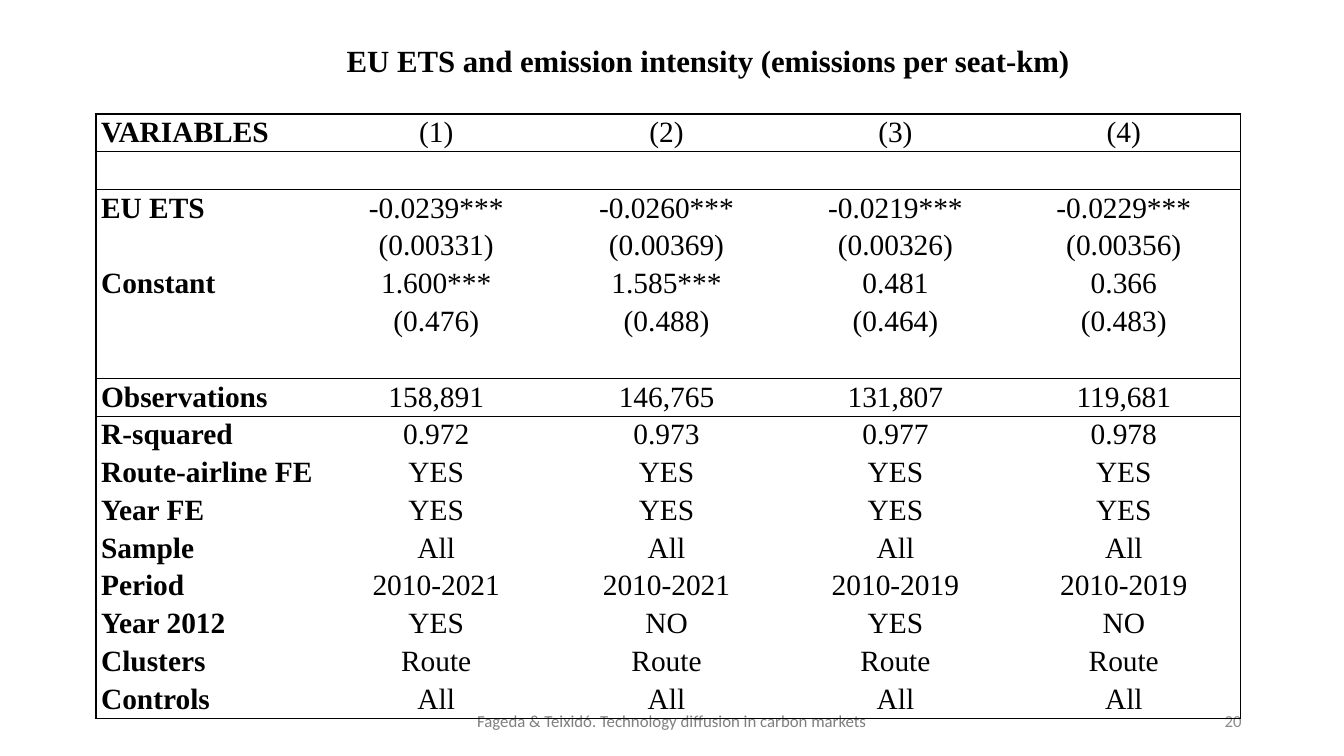
from lxml import etree
from pptx import Presentation
from pptx.dml.color import RGBColor
from pptx.enum.text import MSO_ANCHOR, MSO_AUTO_SIZE, PP_ALIGN
from pptx.oxml.ns import qn
from pptx.util import Pt

LEFT, CENTER, RIGHT = PP_ALIGN.LEFT, PP_ALIGN.CENTER, PP_ALIGN.RIGHT
TOP, MIDDLE = MSO_ANCHOR.TOP, MSO_ANCHOR.MIDDLE
NO_FIT = MSO_AUTO_SIZE.NONE
COLORS = {"ink": "000000", "foot": "808080", "page": "8C8C8C"}
SERIF, SANS = "Times New Roman", "Calibri"
PLAIN = "{2D5ABB26-0587-4C30-8999-92F81FD0307C}"

WIDTHS = [162, 162, 167, 160, 166.3]
ROW_H = 27
BLANK = [""] * 5
HEAD = [["VARIABLES", "(1)", "(2)", "(3)", "(4)"]]
EFFECTS = [
    BLANK,
    ["EU ETS", "-0.0239***", "-0.0260***", "-0.0219***", "-0.0229***"],
    ["", "(0.00331)", "(0.00369)", "(0.00326)", "(0.00356)"],
    ["Constant", "1.600***", "1.585***", "0.481", "0.366"],
    ["", "(0.476)", "(0.488)", "(0.464)", "(0.483)"],
    BLANK,
]
DETAILS = [
    ["Observations", "158,891", "146,765", "131,807", "119,681"],
    ["R-squared", "0.972", "0.973", "0.977", "0.978"],
    ["Route-airline FE"] + ["YES"] * 4,
    ["Year FE"] + ["YES"] * 4,
    ["Sample"] + ["All"] * 4,
    ["Period"] + ["2010-2021"] * 2 + ["2010-2019"] * 2,
    ["Year 2012"] + ["YES", "NO"] * 2,
    ["Clusters"] + ["Route"] * 4,
    ["Controls"] + ["All"] * 4,
]


class Page:
    def __init__(self, deck):
        self.slide = deck.slides.add_slide(deck.slide_layouts[5])

    def label(self, frame, text, size, font, color, align, bold=False):
        frame.text = text
        para = frame.paragraphs[0]
        para.alignment = align
        para.font.size = Pt(size)
        para.font.name = font
        para.font.bold = bold
        para.font.color.rgb = RGBColor.from_string(COLORS[color])
        return para

    def title(self, text, x, y, w, h):
        shape = self.slide.shapes.title
        shape.left, shape.top, shape.width, shape.height = map(Pt, (x, y, w, h))
        frame = shape.text_frame
        frame.vertical_anchor, frame.auto_size = TOP, NO_FIT
        para = self.label(frame, text, 22, SERIF, "ink", CENTER, True)
        para.line_spacing, para.space_after = 1.07, Pt(8)

    def note(self, text, x, y, w, h, color, align):
        frame = self.slide.shapes.add_textbox(*map(Pt, (x, y, w, h))).text_frame
        frame.word_wrap, frame.vertical_anchor = True, MIDDLE
        self.label(frame, text, 12, SANS, color, align)

    def border(self, cell, sides):
        """Draw 1 pt lines on the given sides, a subset of "LRTB" in that order."""
        props = cell._tc.get_or_add_tcPr()
        for i, side in enumerate(sides):
            line = etree.Element(qn(f"a:ln{side}"), w=str(Pt(1)))
            fill = etree.SubElement(line, qn("a:solidFill"))
            etree.SubElement(fill, qn("a:srgbClr"), val=COLORS["ink"])
            props.insert(i, line)

    def table(self, blocks, x, y):
        """Stack blocks of rows, ruled off from each other, inside one frame."""
        rows = sum(blocks, [])
        tops, ends, count = set(), set(), 0
        for block in blocks:
            tops.add(count)
            count += len(block)
            ends.add(count - 1)
        size = (x, y, sum(WIDTHS), ROW_H * count)
        grid = self.slide.shapes.add_table(count, len(WIDTHS), *map(Pt, size)).table
        grid.first_row = grid.horz_banding = False
        grid._tbl.tblPr.find(qn("a:tableStyleId")).text = PLAIN
        for col, width in zip(grid.columns, WIDTHS):
            col.width = Pt(width)
        for r, row in enumerate(rows):
            grid.rows[r].height = Pt(ROW_H)
            for c, text in enumerate(row):
                cell = grid.cell(r, c)
                cell.margin_left = cell.margin_right = Pt(3.6)
                cell.margin_top = cell.margin_bottom = 0
                cell.fill.background()
                para = self.label(cell.text_frame, text, 21, SERIF, "ink",
                                  CENTER if c else LEFT, c == 0)
                para.line_spacing = 1.07
                edges = {"L": c == 0, "R": c == len(row) - 1,
                         "T": r in tops, "B": r in ends}
                self.border(cell, [side for side, on in edges.items() if on])


def main():
    deck = Presentation()
    deck.slide_width, deck.slide_height = Pt(960), Pt(540)
    page = Page(deck)
    page.title("EU ETS and emission intensity (emissions per seat-km)",
               183.6, 24.5, 644.4, 34.5)
    page.note("Fageda & Teixidó. Technology diffusion in carbon markets",
              318, 500.5, 324, 28.75, "foot", CENTER)
    page.note("20", 678, 500.5, 216, 28.75, "page", RIGHT)
    page.table([HEAD, EFFECTS, DETAILS], 68.6, 81.5)
    deck.save("out.pptx")


if __name__ == "__main__":
    main()
